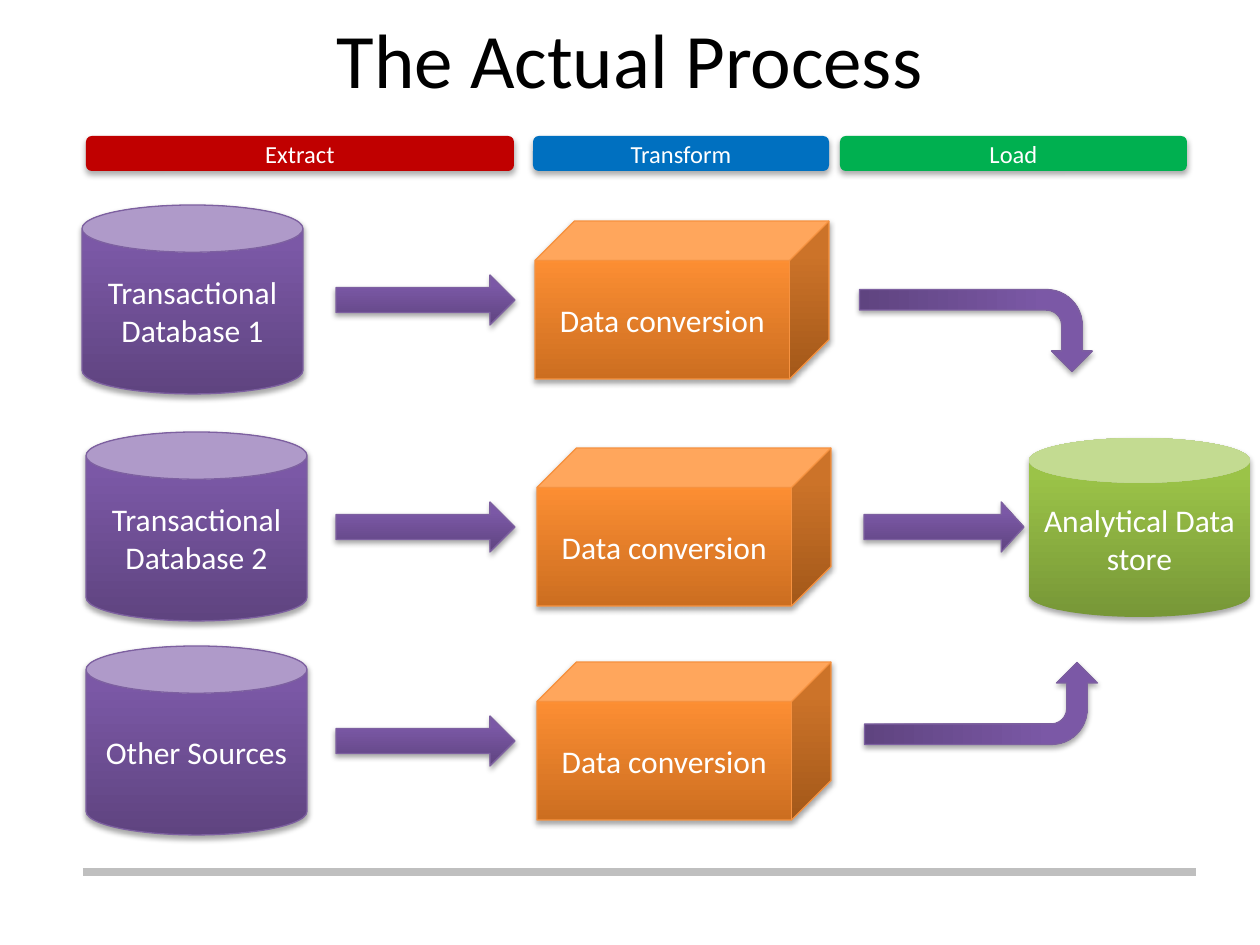
"""Build the extract, transform and load process slide."""
from dataclasses import dataclass

from lxml.etree import SubElement
from pptx import Presentation
from pptx.dml.color import RGBColor
from pptx.enum.shapes import MSO_CONNECTOR as Connector, MSO_SHAPE as Shape
from pptx.enum.text import MSO_ANCHOR as Anchor, PP_ALIGN as Align
from pptx.oxml.ns import qn
from pptx.util import Emu, Pt


@dataclass(frozen=True)
class Theme:
    font: str = "Calibri"
    title_size: int = 44
    label_size: int = 18
    stage_size: int = 14
    text: str = "FFFFFF"
    title: str = "000000"
    rule: str = "BFBFBF"
    purple: tuple = ("5F4480", "7B58A6", "7C57A8")
    purple_line: str = "7D60A0"
    orange: tuple = ("CC6E20", "FF9034", "FF9136")
    orange_line: str = "F69240"
    green: tuple = ("779737", "9BC348", "9DC746")
    stops: tuple = (0, 80, 100)
    soft_shadow: tuple = (3.15, 1.8, 35)
    stage_shadow: tuple = (3.5, 2.2, 32)


THEME = Theme()
EMU_PER_PX = 914400 / 126

TITLE = "The Actual Process"
STAGES = [
    ("Extract", 86, 428, "C00000"),
    ("Transform", 533, 296, "0070C0"),
    ("Load", 840, 347, "00B050"),
]
ROWS = [
    ("Transactional Database 1", 205, 82, 535),
    ("Transactional Database 2", 432, 86, 537),
    ("Other Sources", 646, 86, 537),
]
CONVERSION = "Data conversion"
STORE = "Analytical Data store"

CAN_SIZE = (221, 189)
CUBE_SIZE = (294, 158)
ARROW_SIZE = (179, 50)
BENT_SIZE = (82, 233)


def px(value):
    return Emu(round(value * EMU_PER_PX))


def style_text(text_frame, size, color):
    text_frame.vertical_anchor = Anchor.MIDDLE
    for paragraph in text_frame.paragraphs:
        paragraph.alignment = Align.CENTER
        for run in paragraph.runs:
            run.font.name = THEME.font
            run.font.size = Pt(size)
            run.font.color.rgb = RGBColor.from_string(color)


def add_color(parent, color):
    return SubElement(parent, qn("a:srgbClr"), val=color)


def fill_gradient(shape, colors):
    shape.fill.gradient()
    shape.fill.gradient_angle = 90
    stop_list = shape.element.spPr.find(".//" + qn("a:gsLst"))
    for stop in list(stop_list):
        stop_list.remove(stop)
    for position, color in zip(THEME.stops, colors):
        add_color(SubElement(stop_list, qn("a:gs"), pos=str(position * 1000)), color)


def cast_shadow(shape, blur, distance, opacity):
    shape.shadow.inherit = False
    effects = shape.element.spPr.find(qn("a:effectLst"))
    shadow = SubElement(
        effects, qn("a:outerShdw"), blurRad=str(Pt(blur)), dist=str(Pt(distance)),
        dir="5400000", rotWithShape="0")
    SubElement(add_color(shadow, "000000"), qn("a:alpha"), val=str(opacity * 1000))


def add_block(slide, kind, left, top, size, fill, line=None, text="",
              text_size=THEME.label_size, shadow=THEME.soft_shadow):
    shape = slide.shapes.add_shape(kind, px(left), px(top), *map(px, size))
    if isinstance(fill, tuple):
        fill_gradient(shape, fill)
    else:
        shape.fill.solid()
        shape.fill.fore_color.rgb = RGBColor.from_string(fill)
    if line:
        shape.line.color.rgb = RGBColor.from_string(line)
        shape.line.width = Pt(0.75)
    else:
        shape.line.fill.background()
    cast_shadow(shape, *shadow)
    if text:
        shape.text_frame.text = text
        style_text(shape.text_frame, text_size, THEME.text)
    return shape


def add_purple(slide, kind, left, top, size, text=""):
    return add_block(slide, kind, left, top, size, THEME.purple, THEME.purple_line, text)


def add_rule(slide):
    rule = slide.shapes.add_connector(
        Connector.STRAIGHT, px(83), px(872), px(1196), px(872))
    rule.line.color.rgb = RGBColor.from_string(THEME.rule)
    rule.line.width = Pt(4.5)
    SubElement(rule.element.spPr, qn("a:effectLst"))


def main():
    presentation = Presentation()
    presentation.slide_width, presentation.slide_height = px(1260), px(945)
    slide = presentation.slides.add_slide(presentation.slide_layouts[5])

    title = slide.shapes.title
    title.left, title.top, title.width, title.height = map(px, (63, 0, 1134, 116))
    title.text_frame.text = TITLE
    style_text(title.text_frame, THEME.title_size, THEME.title)

    for name, left, width, color in STAGES:
        add_block(slide, Shape.ROUNDED_RECTANGLE, left, 136, (width, 35), color,
                  text=name, text_size=THEME.stage_size, shadow=THEME.stage_shadow)

    for source, top, can_left, cube_left in ROWS:
        add_purple(slide, Shape.CAN, can_left, top, CAN_SIZE, source)
        add_purple(slide, Shape.RIGHT_ARROW, 336, top + 70, ARROW_SIZE)
        add_block(slide, Shape.CUBE, cube_left, top + 16, CUBE_SIZE,
                  THEME.orange, THEME.orange_line, CONVERSION)

    add_block(slide, Shape.CAN, 1029, 438, (221, 179), THEME.green, text=STORE)
    load_arrow = add_purple(slide, Shape.RIGHT_ARROW, 864, 502, (160, 50))
    load_arrow.adjustments[1] = 0.455

    down_arrow = add_purple(slide, Shape.BENT_ARROW, 935, 214, BENT_SIZE)
    down_arrow.rotation = 90
    up_arrow = add_purple(slide, Shape.BENT_ARROW, 940, 587, BENT_SIZE)
    up_arrow.rotation = 270
    up_arrow.element.spPr.find(qn("a:xfrm")).set("flipV", "1")

    add_rule(slide)
    presentation.save("out.pptx")


if __name__ == "__main__":
    main()
